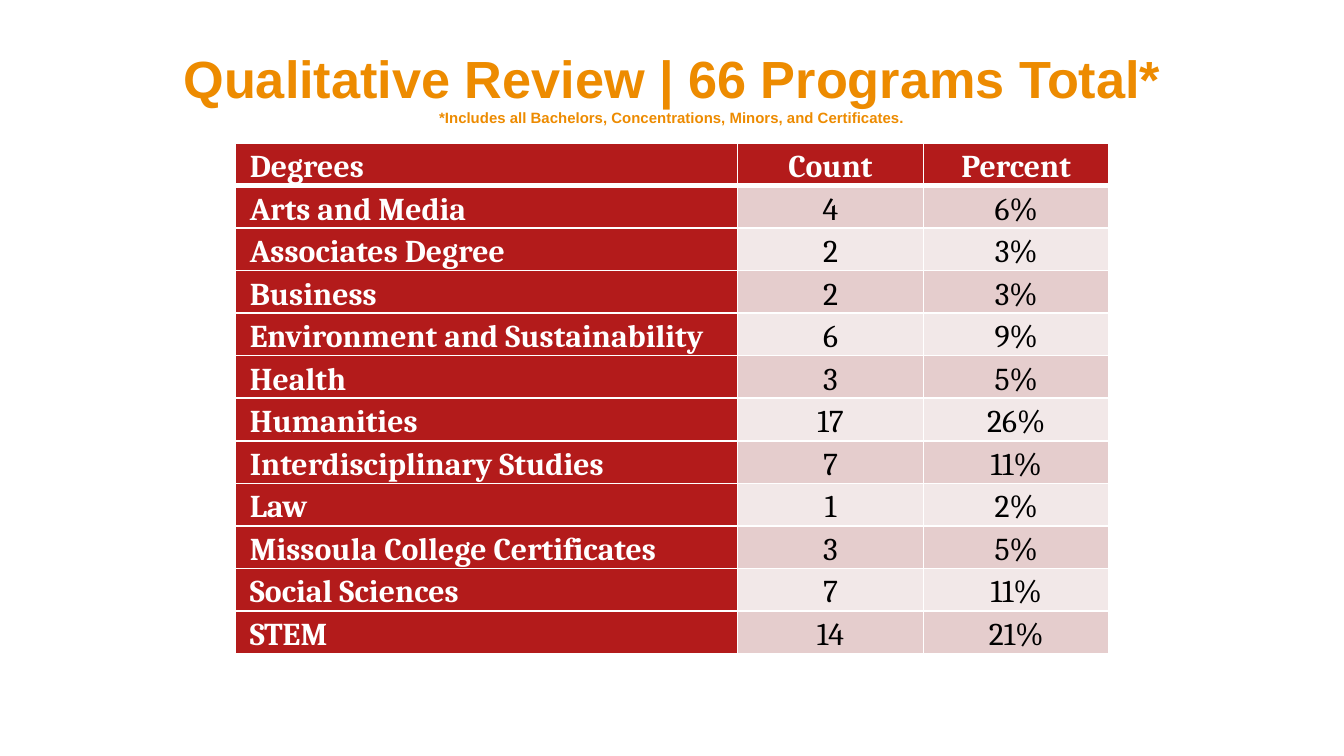
from dataclasses import dataclass

from lxml import etree
from pptx import Presentation
from pptx import util as u
from pptx.dml.color import RGBColor
from pptx.enum import text
from pptx.oxml.ns import qn


@dataclass
class Theme:
    orange: str = "ED8B00"
    red: str = "B31B1B"
    bands: tuple = ("E5CDCD", "F2E8E8")
    white: str = "FFFFFF"
    black: str = "000000"
    title_font: str = "Arial"
    table_font: str = "Cambria"
    title_size: int = 28
    note_size: int = 8
    table_size: int = 17


theme = Theme()


def style_font(font, name, size, color, bold):
    font.name = name
    font.size = u.Pt(size)
    font.bold = bold
    font.color.rgb = RGBColor.from_string(color)


def add_border(cell, side, width):
    line = etree.SubElement(cell._tc.get_or_add_tcPr(), qn(f"a:ln{side}"), w=str(u.Pt(width)))
    fill = etree.SubElement(line, qn("a:solidFill"))
    etree.SubElement(fill, qn("a:srgbClr"), val=theme.white)


deck = Presentation()
deck.slide_width, deck.slide_height = u.Pt(720), u.Pt(405)
page = deck.slides.add_slide(deck.slide_layouts[5])

# Title with a small note on its second line
title = page.shapes.title
title.left, title.top, title.width, title.height = u.Pt(80.6), u.Pt(4.3), u.Pt(558.7), u.Pt(84.2)
frame = title.text_frame
frame.text = ("Qualitative Review | 66 Programs Total*\v"
              "*Includes all Bachelors, Concentrations, Minors, and Certificates.")
frame.word_wrap = True
frame.auto_size = text.MSO_AUTO_SIZE.NONE
frame.vertical_anchor = text.MSO_ANCHOR.MIDDLE
para = frame.paragraphs[0]
para.alignment = text.PP_ALIGN.CENTER
for span, size in zip(para.runs, (theme.title_size, theme.note_size)):
    style_font(span.font, theme.title_font, size, theme.orange, True)
line_break = para._p.find(qn("a:br"))
etree.SubElement(line_break, qn("a:rPr"), sz=str(theme.title_size * 100))

# Programs by degree area
rows = [
    ("Degrees", "Count", "Percent"),
    ("Arts and Media", "4", "6%"),
    ("Associates Degree", "2", "3%"),
    ("Business", "2", "3%"),
    ("Environment and Sustainability", "6", "9%"),
    ("Health", "3", "5%"),
    ("Humanities", "17", "26%"),
    ("Interdisciplinary Studies", "7", "11%"),
    ("Law", "1", "2%"),
    ("Missoula College Certificates", "3", "5%"),
    ("Social Sciences", "7", "11%"),
    ("STEM", "14", "21%"),
]
column_widths = (269, 99.5, 99.5)
row_height = 22.8
table = page.shapes.add_table(
    len(rows), len(column_widths), u.Pt(126.2), u.Pt(76.6),
    u.Pt(sum(column_widths)), u.Pt(row_height * len(rows))).table
table.first_col = True
for column, width in zip(table.columns, column_widths):
    column.width = u.Pt(width)

for r, values in enumerate(rows):
    table.rows[r].height = u.Pt(row_height)
    for c, value in enumerate(values):
        cell = table.cell(r, c)
        is_heading = r == 0 or c == 0
        cell.margin_left = cell.margin_right = u.Pt(7.6)
        cell.margin_top = cell.margin_bottom = 0
        cell.vertical_anchor = text.MSO_ANCHOR.BOTTOM
        # A thicker rule separates the header from the body
        for side, width in (("L", 1), ("R", 1), ("T", 3 if r == 1 else 1), ("B", 3 if r == 0 else 1)):
            add_border(cell, side, width)
        cell.fill.solid()
        cell.fill.fore_color.rgb = RGBColor.from_string(
            theme.red if is_heading else theme.bands[(r - 1) % 2])
        para = cell.text_frame.paragraphs[0]
        para.text = value
        para.alignment = text.PP_ALIGN.LEFT if c == 0 else text.PP_ALIGN.CENTER
        style_font(para.runs[0].font, theme.table_font, theme.table_size,
                   theme.white if is_heading else theme.black, is_heading)

deck.save("out.pptx")
